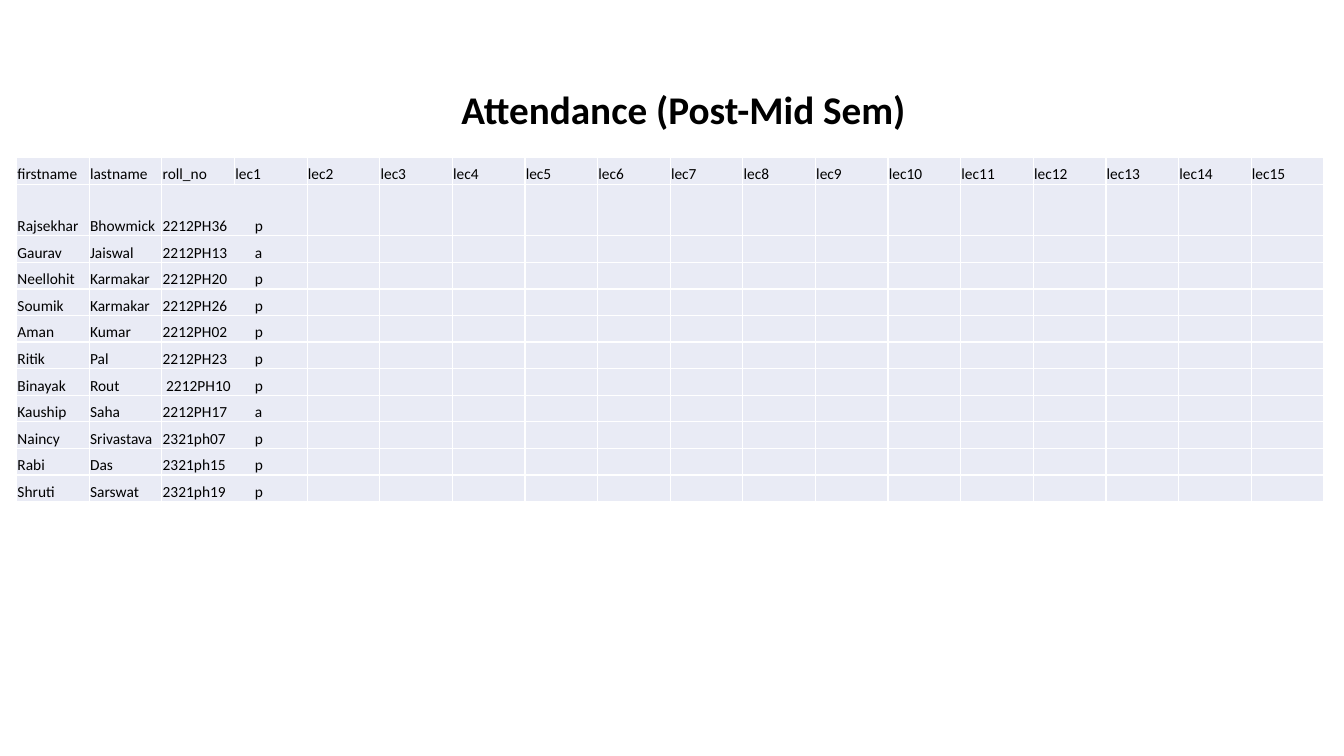
from lxml import etree
from pptx import Presentation
from pptx import util as u
from pptx.dml.color import RGBColor
from pptx.enum import text
from pptx.oxml.ns import qn

COLORS = {"ink": "000000", "cell": "E9EBF5", "rule": "FFFFFF"}
HEAD = ["firstname", "lastname", "roll_no"] + [f"lec{n}" for n in range(1, 16)]
ROLL = [
    ("Rajsekhar", "Bhowmick", "2212PH36", "p"),
    ("Gaurav", "Jaiswal", "2212PH13", "a"),
    ("Neellohit", "Karmakar", "2212PH20", "p"),
    ("Soumik", "Karmakar", "2212PH26", "p"),
    ("Aman", "Kumar", "2212PH02", "p"),
    ("Ritik", "Pal", "2212PH23", "p"),
    ("Binayak", "Rout", " 2212PH10", "p"),
    ("Kauship", "Saha", "2212PH17", "a"),
    ("Naincy", "Srivastava", "2321ph07", "p"),
    ("Rabi", "Das", "2321ph15", "p"),
    ("Shruti", "Sarswat", "2321ph19", "p"),
]


def rgb(name):
    return RGBColor.from_string(COLORS[name])


class Deck:
    font = "Calibri"
    size = 11

    def __init__(self):
        self.prs = Presentation()
        self.prs.slide_width = u.Cm(33.87)
        self.prs.slide_height = u.Cm(19.05)
        self.slide = self.prs.slides.add_slide(self.prs.slide_layouts[6])

    def style(self, para, size, bold=False):
        for run in para.runs:
            run.font.name = self.font
            run.font.size = u.Pt(size)
            run.font.bold = bold
            run.font.color.rgb = rgb("ink")

    def title(self, words, x, y, w, h):
        frame = self.slide.shapes.add_textbox(
            u.Cm(x), u.Cm(y), u.Cm(w), u.Cm(h)).text_frame
        frame.word_wrap = False
        frame.auto_size = text.MSO_AUTO_SIZE.SHAPE_TO_FIT_TEXT
        frame.text = words
        self.style(frame.paragraphs[0], 28, True)

    def border(self, cell):
        props = cell._tc.get_or_add_tcPr()
        for side in ("lnL", "lnR", "lnT", "lnB"):
            line = etree.SubElement(props, qn(f"a:{side}"), w=str(u.Pt(1)))
            fill = etree.SubElement(line, qn("a:solidFill"))
            etree.SubElement(fill, qn("a:srgbClr"), val=COLORS["rule"])

    def cell(self, cell, words):
        self.border(cell)
        cell.fill.solid()
        cell.fill.fore_color.rgb = rgb("cell")
        cell.margin_left = cell.margin_right = cell.margin_top = u.Cm(0.02)
        cell.margin_bottom = 0
        cell.vertical_anchor = text.MSO_ANCHOR.BOTTOM
        para = cell.text_frame.paragraphs[0]
        para.text = words
        self.style(para, self.size)
        if not words:
            etree.SubElement(para._p, qn("a:endParaRPr"), sz=str(self.size * 100))

    def tab(self, cell, stop):
        """Set a left tab stop, in cm, in the first paragraph."""
        props = cell.text_frame.paragraphs[0]._p.get_or_add_pPr()
        tabs = etree.SubElement(props, qn("a:tabLst"))
        etree.SubElement(tabs, qn("a:tab"), pos=str(u.Cm(stop)), algn="l")

    def table(self, head, roll, x, y, wide, high, tall):
        """Draw the register; the first student row is tall."""
        highs = [high, tall] + [high] * (len(roll) - 1)
        grid = self.slide.shapes.add_table(
            len(highs), len(head), u.Cm(x), u.Cm(y),
            u.Cm(wide * len(head)), u.Cm(sum(highs))).table
        grid.first_row = grid.horz_banding = False
        for col in grid.columns:
            col.width = u.Cm(wide)
        for row, size in zip(grid.rows, highs):
            row.height = u.Cm(size)
        blank = [""] * (len(head) - 3)
        rows = [head] + [[first, last, f"{code}\t{mark}"] + blank
                         for first, last, code, mark in roll]
        for r, row in enumerate(rows):
            for c, words in enumerate(row):
                self.cell(grid.cell(r, c), words)
            if r:
                grid.cell(r, 2).merge(grid.cell(r, 3))
                self.tab(grid.cell(r, 2), 2.32)


def main():
    deck = Deck()
    deck.table(HEAD, ROLL, 0.42, 3.97, 1.83, 0.67, 1.3)
    deck.title("Attendance (Post-Mid Sem)", 11.38, 2.03, 11.89, 1.45)
    deck.prs.save("out.pptx")


if __name__ == "__main__":
    main()
